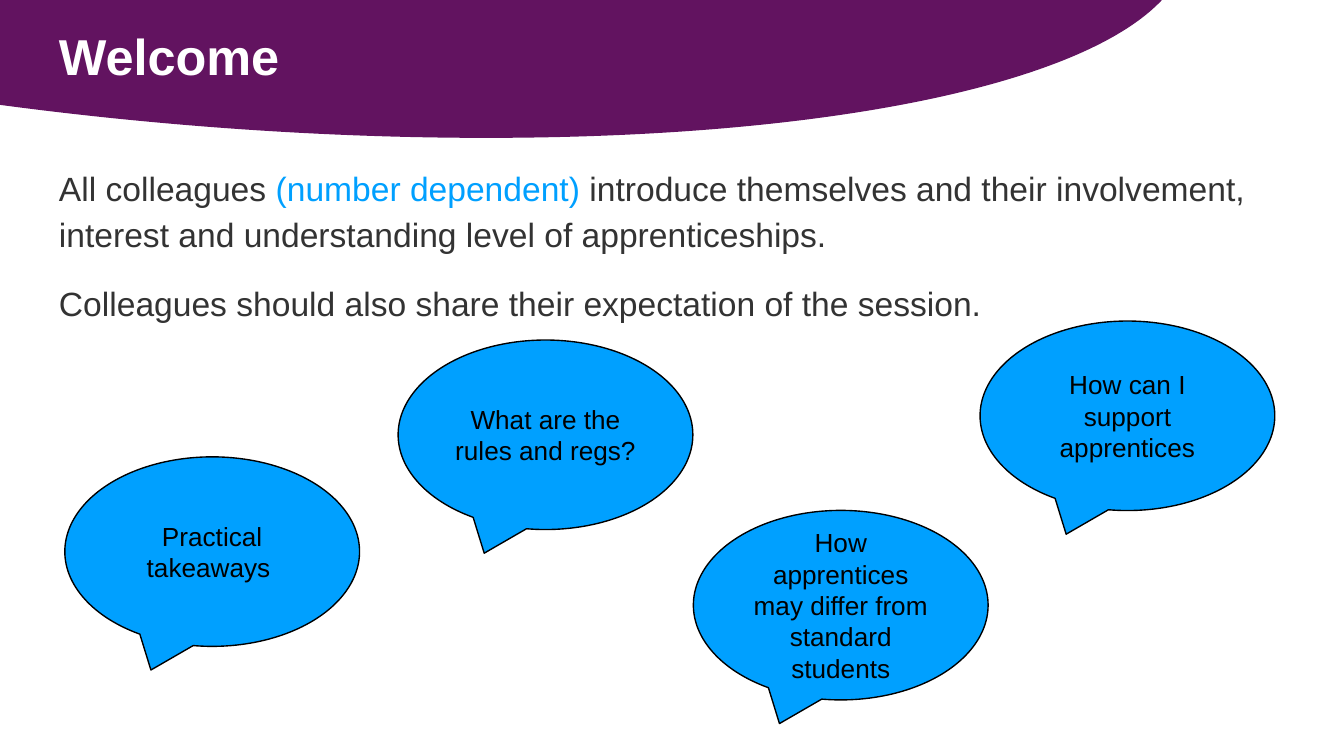
from dataclasses import dataclass

from pptx import Presentation
from pptx.dml.color import RGBColor
from pptx.enum.shapes import MSO_SHAPE
from pptx.enum.text import MSO_ANCHOR, PP_ALIGN
from pptx.shapes.autoshape import Shape
from pptx.slide import Slide
from pptx.text.text import TextFrame, _Paragraph
from pptx.util import Inches, Pt

ELLIPSE = MSO_SHAPE.OVAL
CALLOUT = MSO_SHAPE.OVAL_CALLOUT
TOP, MIDDLE = MSO_ANCHOR.TOP, MSO_ANCHOR.MIDDLE
CENTER = PP_ALIGN.CENTER

# Widescreen, 16 to 9
SLIDE_WIDTH = Inches(10)
SLIDE_HEIGHT = SLIDE_WIDTH * 9 // 16


@dataclass(frozen=True)
class Theme:
    font: str = "Arial"
    purple: str = "621360"
    blue: str = "00A0FF"
    white: str = "FFFFFF"
    dark: str = "333333"
    black: str = "000000"
    title_size: float = 27
    body_size: float = 18
    bubble_size: float = 14
    outline: float = 0.75


@dataclass(frozen=True)
class Area:
    """A rectangle in percent of the slide's width and height."""
    left: float
    top: float
    width: float
    height: float

    def lengths(self) -> tuple[int, int, int, int]:
        return (int(SLIDE_WIDTH * self.left / 100),
                int(SLIDE_HEIGHT * self.top / 100),
                int(SLIDE_WIDTH * self.width / 100),
                int(SLIDE_HEIGHT * self.height / 100))


@dataclass(frozen=True)
class Bubble:
    left: float
    top: float
    text: str


THEME = Theme()
BANNER = Area(-61.6, -54.4, 150.3, 70.76)
BANNER_ROTATION = 5.2
TITLE = Area(3.41, 1.6, 93.18, 12.1)
BODY = Area(3.41, 19.65, 93.18, 75.73)
BUBBLE_WIDTH, BUBBLE_HEIGHT = 21.93, 25.07
BUBBLE_TAIL = (-0.208, 0.625)
BUBBLES = (
    Bubble(4.83, 60.44, "Practical takeaways "),
    Bubble(51.6, 67.52, "How apprentices may differ from standard students"),
    Bubble(72.93, 42.47, "How can I support apprentices"),
    Bubble(29.63, 44.98, "What are the rules and regs?"),
)


def color(value: str) -> RGBColor:
    return RGBColor.from_string(value)


def prepare_frame(frame: TextFrame, anchor: MSO_ANCHOR) -> None:
    frame.word_wrap = True
    frame.vertical_anchor = anchor
    frame.margin_left = frame.margin_right = Inches(0.1)
    frame.margin_top = frame.margin_bottom = Inches(0.1)


def add_text_box(page: Slide, area: Area) -> TextFrame:
    frame = page.shapes.add_textbox(*area.lengths()).text_frame
    prepare_frame(frame, TOP)
    return frame


def add_span(para: _Paragraph, text: str, size: float, ink: str,
             bold: bool = False) -> None:
    span = para.add_run()
    span.text = text
    span.font.name = THEME.font
    span.font.size = Pt(size)
    span.font.bold = bold
    span.font.color.rgb = color(ink)


def add_filled_shape(page: Slide, kind: MSO_SHAPE, area: Area, fill: str) -> Shape:
    shape = page.shapes.add_shape(kind, *area.lengths())
    shape.shadow.inherit = False
    shape.fill.solid()
    shape.fill.fore_color.rgb = color(fill)
    return shape


def add_banner(page: Slide) -> None:
    banner = add_filled_shape(page, ELLIPSE, BANNER, THEME.purple)
    banner.line.fill.background()
    banner.rotation = BANNER_ROTATION


def add_body(page: Slide) -> None:
    frame = add_text_box(page, BODY)
    introduction = frame.paragraphs[0]
    expectation = frame.add_paragraph()
    for para in (introduction, expectation):
        para.line_spacing = 1.15
    expectation.space_before = expectation.space_after = Pt(12)

    size = THEME.body_size
    add_span(introduction, "All colleagues ", size, THEME.dark)
    add_span(introduction, "(number dependent)", size, THEME.blue)
    add_span(introduction, " introduce themselves and their involvement, "
             "interest and understanding level of apprenticeships.",
             size, THEME.dark)
    add_span(expectation, "Colleagues should also share their expectation "
             "of the session.", size, THEME.dark)


def add_bubble(page: Slide, bubble: Bubble) -> None:
    area = Area(bubble.left, bubble.top, BUBBLE_WIDTH, BUBBLE_HEIGHT)
    shape = add_filled_shape(page, CALLOUT, area, THEME.blue)
    shape.line.color.rgb = color(THEME.black)
    shape.line.width = Pt(THEME.outline)
    for index, offset in enumerate(BUBBLE_TAIL):
        shape.adjustments[index] = offset
    prepare_frame(shape.text_frame, MIDDLE)
    para = shape.text_frame.paragraphs[0]
    para.alignment = CENTER
    add_span(para, bubble.text, THEME.bubble_size, THEME.black)


def main() -> None:
    deck = Presentation()
    deck.slide_width, deck.slide_height = SLIDE_WIDTH, SLIDE_HEIGHT
    page = deck.slides.add_slide(deck.slide_layouts[6])
    page.background.fill.solid()
    page.background.fill.fore_color.rgb = color(THEME.white)

    # Banner and title
    add_banner(page)
    title = add_text_box(page, TITLE)
    add_span(title.paragraphs[0], "Welcome", THEME.title_size, THEME.white, bold=True)

    # Instructions
    add_body(page)

    # Speech bubbles
    for bubble in BUBBLES:
        add_bubble(page, bubble)

    deck.save("out.pptx")


if __name__ == "__main__":
    main()
